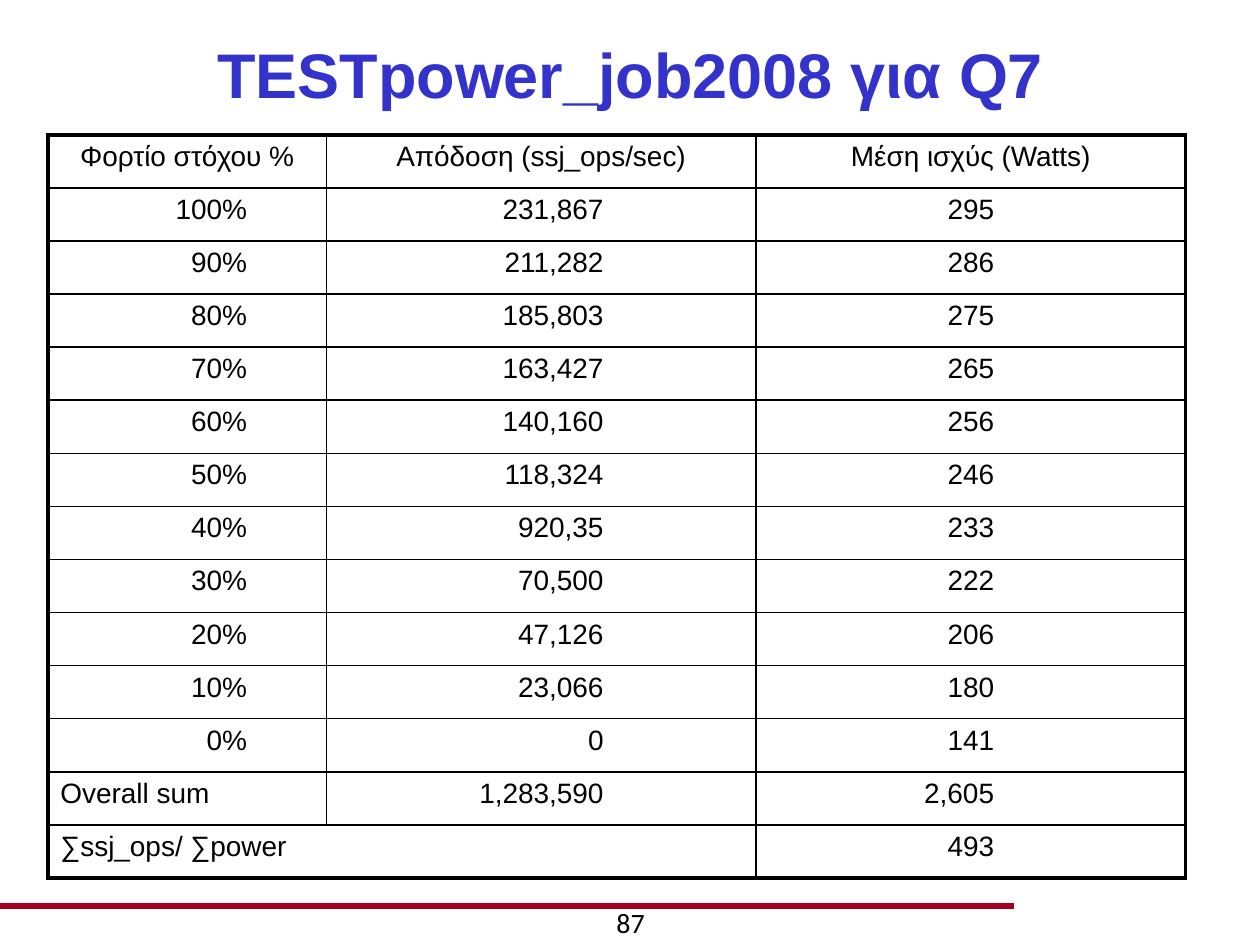
import pptx
import pptx.util
import pptx.dml.color
import pptx.enum.text
import pptx.enum.shapes
import pptx.oxml.ns
import lxml.etree

# Content
TITLE = "TESTpower_job2008 για Q7"
PAGE = "87"
HEADS = ["Φορτίο στόχου %", "Απόδοση (ssj_ops/sec)", "Μέση ισχύς (Watts)"]
LOADS = [
    ("100%", "231,867", "295"),
    ("90%", "211,282", "286"),
    ("80%", "185,803", "275"),
    ("70%", "163,427", "265"),
    ("60%", "140,160", "256"),
    ("50%", "118,324", "246"),
    ("40%", "920,35", "233"),
    ("30%", "70,500", "222"),
    ("20%", "47,126", "206"),
    ("10%", "23,066", "180"),
    ("0%", "0", "141"),
]
SUM = ("Overall sum", "1,283,590", "2,605")
RATIO = ("∑ssj_ops/ ∑power", "493")

COLORS = {"title": "3333CC", "text": "000000", "rule": "A50021"}
WIDTHS = [1.68, 0.53, 2.3, 1.11, 1.99, 1.42]
HIGH = 5.9

# Each cell: column, columns spanned, text, alignment
rows = [[(2 * i, 2, t, "CENTER") for i, t in enumerate(HEADS)]]
for load in LOADS:
    rows.append([(2 * i, 1, t, "RIGHT") for i, t in enumerate(load)])
rows.append([(0, 2, SUM[0], "LEFT"), (2, 1, SUM[1], "RIGHT"), (4, 1, SUM[2], "RIGHT")])
rows.append([(0, 4, RATIO[0], "LEFT"), (4, 1, RATIO[1], "RIGHT")])

# Line widths by grid edge; thin where not named
COUNT = len(rows)
ACROSS = {0: 2.25, 1: 1.5, COUNT - 2: 1.5, COUNT: 2.25}
DOWN = {0: 2.25, 2: 1, 4: 1, 6: 2.25}

Inches = pptx.util.Inches
qn = pptx.oxml.ns.qn


def rgb(name):
    return pptx.dml.color.RGBColor.from_string(COLORS[name])


def write(frame, text, size=16, font="Arial", color="text", bold=False, align="CENTER"):
    para = frame.paragraphs[0]
    para.alignment = getattr(pptx.enum.text.PP_ALIGN, align)
    para.space_before = pptx.util.Pt(0)
    run = para.add_run()
    run.text = text
    run.font.size = pptx.util.Pt(size)
    run.font.name = font
    run.font.bold = bold
    run.font.color.rgb = rgb(color)


def edge(cell, side, width):
    props = cell._tc.get_or_add_tcPr()
    line = lxml.etree.SubElement(props, qn("a:ln" + side))
    if width:
        line.set("w", str(pptx.util.Pt(width)))
        fill = lxml.etree.SubElement(line, qn("a:solidFill"))
        lxml.etree.SubElement(fill, qn("a:srgbClr")).set("val", COLORS["text"])
    else:
        line.set("w", "0")
        lxml.etree.SubElement(line, qn("a:noFill"))


deck = pptx.Presentation()
deck.slide_width, deck.slide_height = Inches(10), Inches(7.5)
slide = deck.slides.add_slide(deck.slide_layouts[5])

# Footer rule
rule = slide.shapes.add_connector(
    pptx.enum.shapes.MSO_CONNECTOR.STRAIGHT,
    Inches(0), Inches(7.19), Inches(8.05), Inches(7.19))
rule.line.color.rgb = rgb("rule")
rule.line.width = pptx.util.Pt(3)
lxml.etree.SubElement(rule._element.spPr, qn("a:effectLst"))

# Title
title = slide.shapes.title
title.left, title.top = Inches(0.38), Inches(0.25)
title.width, title.height = Inches(9.25), Inches(0.67)
title.text_frame.vertical_anchor = pptx.enum.text.MSO_ANCHOR.MIDDLE
write(title.text_frame, TITLE, size=36, color="title", bold=True)

# Table
table = slide.shapes.add_table(
    COUNT, len(WIDTHS), Inches(0.38), Inches(1.07),
    Inches(sum(WIDTHS)), Inches(HIGH)).table
table.first_row = table.horz_banding = False
for col, width in zip(table.columns, WIDTHS):
    col.width = Inches(width)
for row in table.rows:
    row.height = Inches(HIGH / COUNT)

for r, row in enumerate(rows):
    spans = {}
    for c, span, text, align in row:
        cell = table.cell(r, c)
        if span > 1:
            cell.merge(table.cell(r, c + span - 1))
        spans[c] = span
        write(cell.text_frame, text, align=align)
    for c in range(len(WIDTHS)):
        cell = table.cell(r, c)
        inner = cell.is_spanned
        edge(cell, "L", 0 if inner else DOWN.get(c))
        edge(cell, "R", DOWN.get(c + spans.get(c, 1)) if not inner or c % 2 else 0)
        edge(cell, "T", ACROSS.get(r, 1))
        edge(cell, "B", ACROSS.get(r + 1, 1))
        cell.fill.background()

# Page number
page = slide.shapes.add_textbox(Inches(3.42), Inches(7.14), Inches(3.17), Inches(0.4))
page.text_frame.word_wrap = True
write(page.text_frame, PAGE, font="Calibri")

deck.save("out.pptx")
